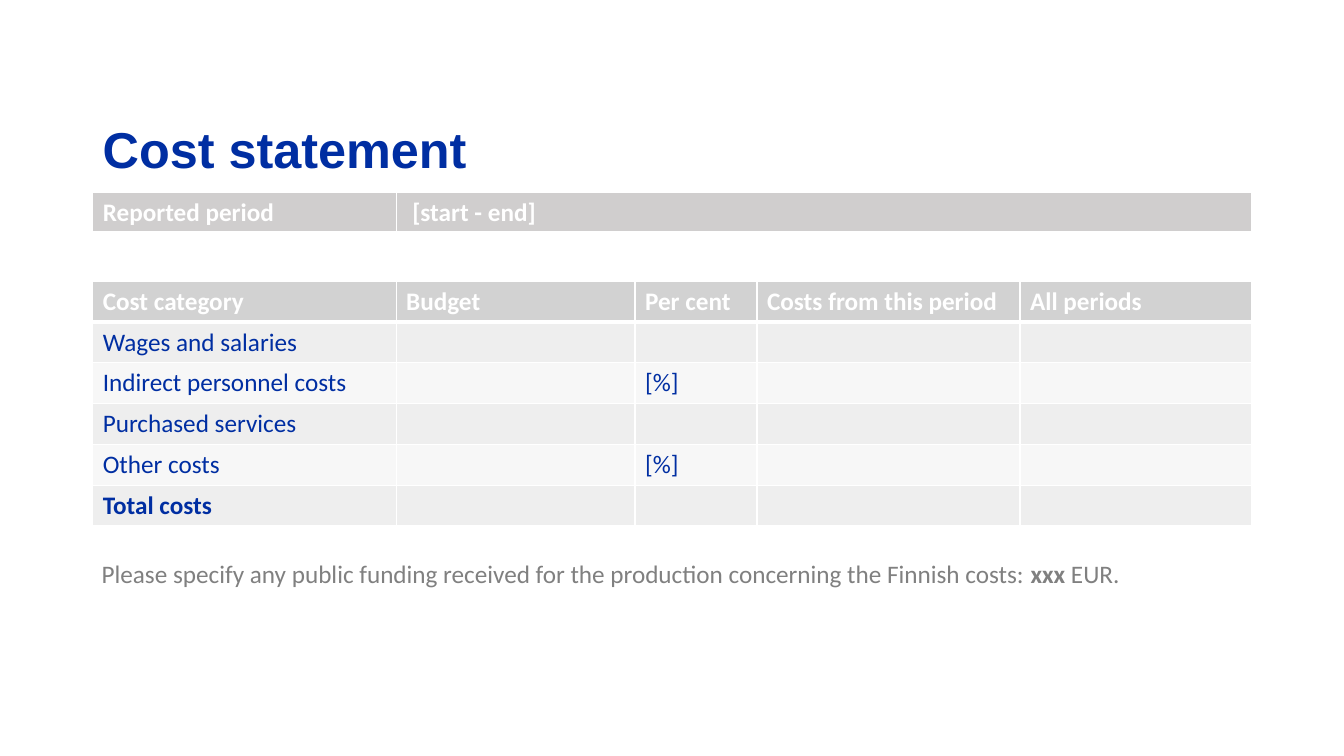
"""Build the cost statement slide on a grid of tenths of an inch."""

import dataclasses
import typing

import pptx
import pptx.dml.color
import pptx.enum.text
import pptx.oxml
import pptx.oxml.ns
import pptx.presentation
import pptx.shapes.autoshape
import pptx.slide
import pptx.table
import pptx.text.text
import pptx.util

SLIDE_COLUMNS, SLIDE_ROWS = 133.33, 75
TABLE_LEFT = 9.2
ROW_HEIGHT = 4.05
CATEGORY_WIDTH = 30.1
BLUE, WHITE, GREY = "002EA2", "FFFFFF", "808080"
THIN, THICK = 1, 3


@dataclasses.dataclass(frozen=True)
class Run:
    text: str
    size: float
    font: str
    color: str
    bold: bool = False


@dataclasses.dataclass(frozen=True)
class TextBox:
    left: float
    top: float
    width: float
    height: float
    runs: tuple[Run, ...]
    anchor: pptx.enum.text.MSO_ANCHOR = pptx.enum.text.MSO_ANCHOR.TOP
    line_spacing: float = 1.0
    wrap: bool = True


@dataclasses.dataclass(frozen=True)
class CostTable:
    top: float
    widths: tuple[float, ...]
    rows: tuple[tuple[str, ...], ...]
    header_fill: str
    indented_column: typing.Optional[int] = None
    body_fills: tuple[str, ...] = ("EEEEEE", "F7F7F7")


TITLE = TextBox(
    TABLE_LEFT, 11.5, 115, 7.6,
    (Run("Cost statement", 36, "Arial", BLUE, True),),
    pptx.enum.text.MSO_ANCHOR.MIDDLE, 0.8,
)
FUNDING_NOTE = TextBox(
    9.1, 54.9, 105.1, 4,
    (
        Run(
            "Please specify any public funding received for the production "
            "concerning the Finnish costs: ",
            18, "Calibri", GREY,
        ),
        Run("xxx", 18, "Calibri", GREY, True),
        Run(" EUR.", 18, "Calibri", GREY),
    ),
    wrap=False,
)
COSTS = CostTable(
    27.9,
    (CATEGORY_WIDTH, 23.7, 12.1, 26.1, 23),
    (
        ("Cost category", "Budget", "Per cent", "Costs from this period", "All periods"),
        ("Wages and salaries", "", "", "", ""),
        ("Indirect personnel costs", "", "[%]", "", ""),
        ("Purchased services", "", "", "", ""),
        ("Other costs", "", "[%]", "", ""),
        ("Total costs", "", "", "", ""),
    ),
    "D2D2D2",
)
PERIOD = CostTable(
    19.1,
    (CATEGORY_WIDTH, 84.9),
    (("Reported period", "[start - end]"),),
    "D0CECE",
    indented_column=1,
)


def grid(units: float) -> pptx.util.Length:
    """Turn grid columns or rows into a length."""
    return pptx.util.Inches(units / 10)


def rgb(color: str) -> pptx.dml.color.RGBColor:
    """Turn a hex string into a colour."""
    return pptx.dml.color.RGBColor.from_string(color)


def format_run(run: pptx.text.text._Run, style: Run) -> None:
    """Apply the described font to a run."""
    run.font.size = pptx.util.Pt(style.size)
    run.font.name = style.font
    run.font.bold = style.bold
    run.font.color.rgb = rgb(style.color)


def draw_text(slide: pptx.slide.Slide, box: TextBox) -> None:
    """Draw a one-paragraph text box."""
    shape = slide.shapes.add_textbox(
        grid(box.left), grid(box.top), grid(box.width), grid(box.height)
    )
    shape.text_frame.word_wrap = box.wrap
    shape.text_frame.vertical_anchor = box.anchor
    paragraph = shape.text_frame.paragraphs[0]
    paragraph.line_spacing = box.line_spacing
    for style in box.runs:
        run = paragraph.add_run()
        run.text = style.text
        format_run(run, style)


def set_borders(cell: pptx.table._Cell, top: float, bottom: float) -> None:
    """Give a cell white borders of the given point widths."""
    properties = cell._tc.get_or_add_tcPr()
    for side, width in (("L", THIN), ("R", THIN), ("T", top), ("B", bottom)):
        properties.append(pptx.oxml.parse_xml(
            f'<a:ln{side} {pptx.oxml.ns.nsdecls("a")} w="{pptx.util.Pt(width)}">'
            f'<a:solidFill><a:srgbClr val="{WHITE}"/></a:solidFill></a:ln{side}>'
        ))


def fill_cell(cell: pptx.table._Cell, text: str, row: int, table: CostTable) -> None:
    """Write and colour one cell according to its row."""
    header = row == 0
    set_borders(cell, THICK if row == 1 else THIN, THICK if header else THIN)
    cell.fill.solid()
    banded = table.body_fills[(row - 1) % len(table.body_fills)]
    cell.fill.fore_color.rgb = rgb(table.header_fill if header else banded)
    cell.text_frame.text = text
    bold = header or row == len(table.rows) - 1
    style = Run(text, 18, "Calibri", WHITE if header else BLUE, bold)
    for run in cell.text_frame.paragraphs[0].runs:
        format_run(run, style)


def draw_table(slide: pptx.slide.Slide, description: CostTable) -> None:
    """Draw a table with a header row and banded body rows."""
    rows, widths = description.rows, description.widths
    table = slide.shapes.add_table(
        len(rows), len(widths), grid(TABLE_LEFT), grid(description.top),
        grid(sum(widths)), grid(ROW_HEIGHT * len(rows)),
    ).table
    table.horz_banding = False
    for column, width in zip(table.columns, widths):
        column.width = grid(width)
    for row_index, texts in enumerate(rows):
        table.rows[row_index].height = grid(ROW_HEIGHT)
        for column_index, text in enumerate(texts):
            cell = table.cell(row_index, column_index)
            fill_cell(cell, text, row_index, description)
            if column_index == description.indented_column:
                cell.margin_left = grid(1.6)


def main() -> None:
    """Build and save the presentation."""
    presentation = pptx.Presentation()
    presentation.slide_width = grid(SLIDE_COLUMNS)
    presentation.slide_height = grid(SLIDE_ROWS)
    slide = presentation.slides.add_slide(presentation.slide_layouts[6])
    draw_text(slide, TITLE)
    for table in (COSTS, PERIOD):
        draw_table(slide, table)
    draw_text(slide, FUNDING_NOTE)
    presentation.save("out.pptx")


if __name__ == "__main__":
    main()
